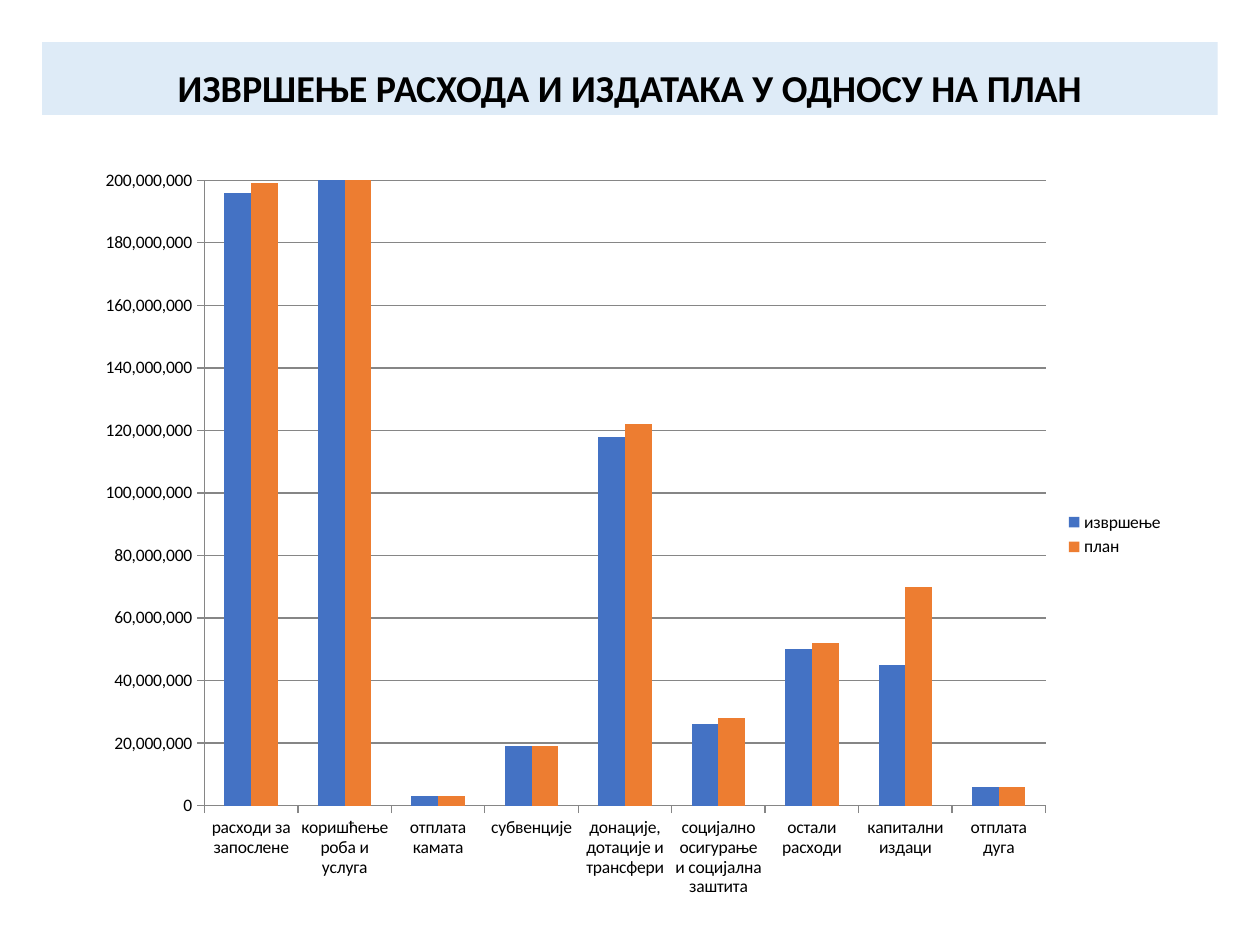
from lxml import etree
from pptx import Presentation
from pptx import util as u
from pptx.chart import data as chart_data
from pptx.dml import color
from pptx.enum import chart as charts, shapes, text
from pptx.oxml import ns


def rgb(value):
    return color.RGBColor.from_string(value)


def style(target, values):
    """Set every attribute named in values on target."""
    for name, value in values.items():
        setattr(target, name, value)


deck = Presentation()
style(deck, {"slide_width": u.Cm(25.4), "slide_height": u.Cm(19.05)})
page = deck.slides.add_slide(deck.slide_layouts[6])

# Title band
band = page.shapes.add_shape(
    shapes.MSO_SHAPE.RECTANGLE, u.Cm(0.85), u.Cm(0.85), u.Cm(23.7), u.Cm(1.47))
band.shadow.inherit = False
band.fill.solid()
band.fill.fore_color.rgb = rgb("DEEBF7")
band.line.fill.background()
style(band.text_frame, {"word_wrap": True,
                        "vertical_anchor": text.MSO_ANCHOR.BOTTOM})
para = band.text_frame.paragraphs[0]
style(para, {"alignment": text.PP_ALIGN.CENTER, "line_spacing": 0.7})
span = para.add_run()
span.text = "ИЗВРШЕЊЕ РАСХОДА И ИЗДАТАКА У ОДНОСУ НА ПЛАН"
style(span.font, {"name": "Calibri", "size": u.Pt(21.7), "bold": True})
span.font.color.rgb = rgb("000000")

# Spending by category, in millions: execution, plan
spending = {
    "расходи за запослене": (196, 199),
    "коришћење роба и услуга": (201, 213),
    "отплата камата": (3, 3),
    "субвенције": (19, 19),
    "донације, дотације и трансфери": (118, 122),
    "социјално осигурање и социјална заштита": (26, 28),
    "остали расходи": (50, 52),
    "капитални издаци": (45, 70),
    "отплата дуга": (6, 6),
}
series_colors = {"извршење": "4472C4", "план": "ED7D31"}

data = chart_data.CategoryChartData(number_format="#,##0")
data.categories = list(spending)
for name, millions in zip(series_colors, zip(*spending.values())):
    data.add_series(name, [value * 1_000_000 for value in millions])

chart = page.shapes.add_chart(
    charts.XL_CHART_TYPE.COLUMN_CLUSTERED,
    u.Cm(1.7), u.Cm(3.18), u.Cm(22.02), u.Cm(15.19), data).chart
style(chart, {"has_title": False, "has_legend": True})
style(chart.font, {"name": "Calibri", "size": u.Pt(10)})
chart.font.color.rgb = rgb("000000")
style(chart.legend, {"position": charts.XL_LEGEND_POSITION.RIGHT,
                     "include_in_layout": False})

plot = chart.plots[0]
style(plot, {"gap_width": 150, "overlap": 0, "vary_by_categories": False})
for series, fill in zip(plot.series, series_colors.values()):
    series.invert_if_negative = False
    series.format.fill.solid()
    series.format.fill.fore_color.rgb = rgb(fill)

value_axis, category_axis = chart.value_axis, chart.category_axis
style(value_axis, {"minimum_scale": 0, "maximum_scale": 200_000_000,
                   "major_unit": 20_000_000, "has_major_gridlines": True})
style(value_axis.tick_labels, {"number_format": "#,##0",
                               "number_format_is_linked": False})
for axis in (value_axis, category_axis):
    style(axis, {"major_tick_mark": charts.XL_TICK_MARK.OUTSIDE,
                 "minor_tick_mark": charts.XL_TICK_MARK.NONE})
for lined in (value_axis, category_axis, value_axis.major_gridlines):
    lined.format.line.width = u.Pt(0.75)
    lined.format.line.color.rgb = rgb("868686")

# Fixed inner plot area, as fractions of the chart
plot_area = chart.plots[0]._element.getparent()
for layout in plot_area.findall(ns.qn("c:layout")):
    plot_area.remove(layout)
layout = etree.Element(ns.qn("c:layout"))
plot_area.insert(0, layout)
manual = etree.SubElement(layout, ns.qn("c:manualLayout"))
placement = {"layoutTarget": "inner", "xMode": "edge", "yMode": "edge",
             "x": "0.11", "y": "0.03", "w": "0.77", "h": "0.83"}
for tag, value in placement.items():
    etree.SubElement(manual, ns.qn(f"c:{tag}")).set("val", value)

deck.save("out.pptx")
